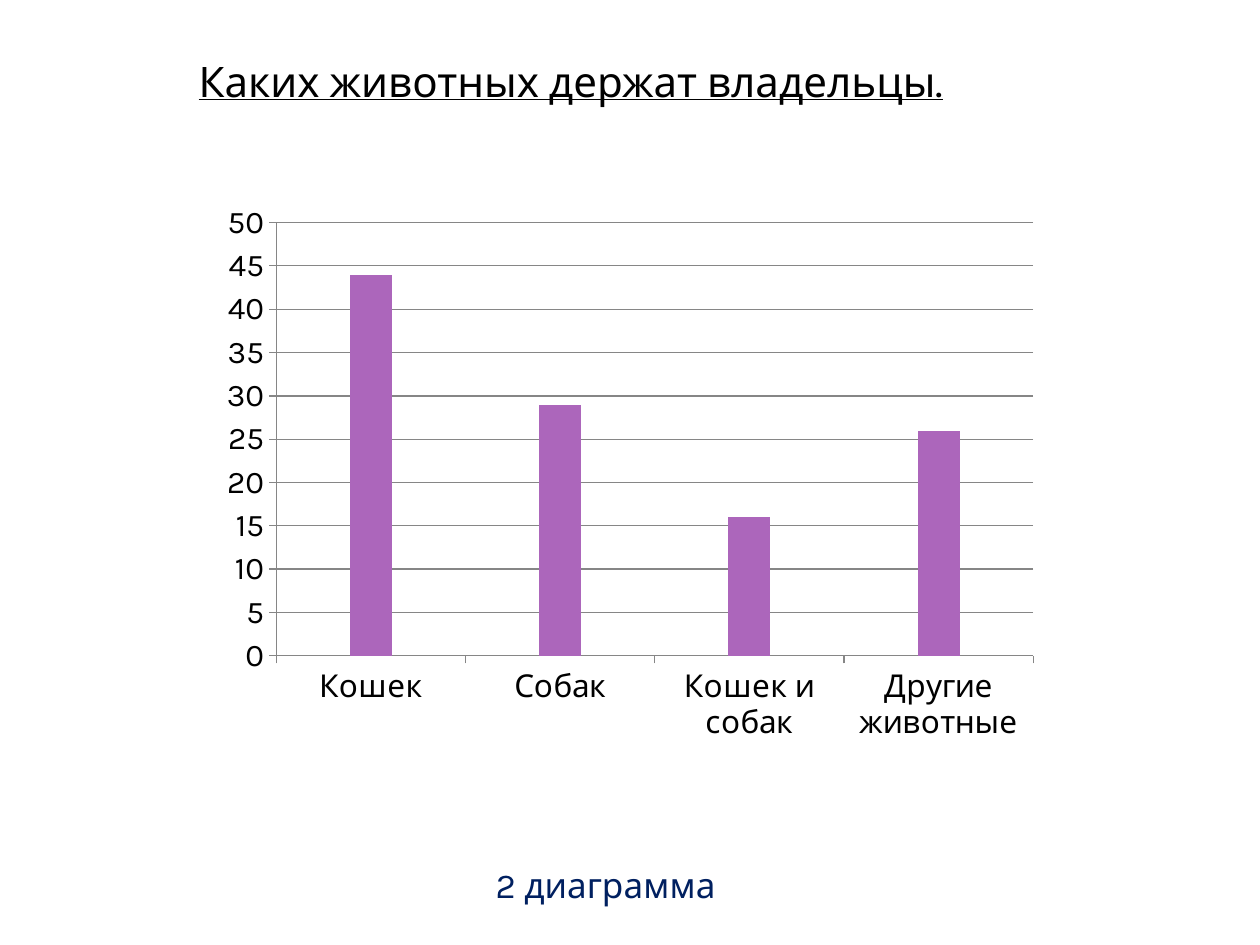
from dataclasses import dataclass

from pptx import Presentation
from pptx.chart.data import CategoryChartData
from pptx.dml.color import RGBColor
from pptx.enum.chart import XL_CHART_TYPE, XL_TICK_MARK
from pptx.enum.text import MSO_ANCHOR, MSO_AUTO_SIZE, PP_ALIGN
from pptx.util import Pt

COLUMNS = XL_CHART_TYPE.COLUMN_CLUSTERED
TICK_OUTSIDE = XL_TICK_MARK.OUTSIDE
TOP, BOTTOM = MSO_ANCHOR.TOP, MSO_ANCHOR.BOTTOM
LEFT, RIGHT = PP_ALIGN.LEFT, PP_ALIGN.RIGHT
NO_AUTOFIT = MSO_AUTO_SIZE.NONE

EMU_PER_PX = 914400 / 126
SLIDE_WIDTH, SLIDE_HEIGHT = 1260, 945
TITLE_ONLY_LAYOUT = 5

TITLE_BOX = (186, 49, 788, 63)
CHART_BOX = (210, 193, 840, 560)
CAPTION_BOX = (364, 857, 364, 49)

ANIMALS = ("Кошек", "Собак", "Кошек и собак", "Другие животные")
OWNERS = (44, 29, 16, 26)


@dataclass(frozen=True)
class Theme:
    font: str = "Karla"
    text: RGBColor = RGBColor(0x00, 0x00, 0x00)
    caption: RGBColor = RGBColor(0x00, 0x20, 0x60)
    grid: RGBColor = RGBColor(0x86, 0x86, 0x86)
    series: tuple = (
        RGBColor(0xB8, 0x3D, 0x68),
        RGBColor(0xAC, 0x66, 0xBB),
        RGBColor(0xDE, 0x6C, 0x36),
    )
    title_size: int = 24
    caption_size: int = 20
    chart_size: int = 18


THEME = Theme()


def px(length):
    return round(length * EMU_PER_PX)


def emu_box(box):
    return [px(length) for length in box]


def style_font(font, size, color):
    font.name = THEME.font
    font.size = Pt(size)
    font.color.rgb = color


def add_title(slide, box):
    title = slide.shapes.title
    title.left, title.top, title.width, title.height = emu_box(box)
    frame = title.text_frame
    frame.text = "Каких животных держат владельцы."
    frame.auto_size = NO_AUTOFIT
    frame.vertical_anchor = TOP
    heading = frame.paragraphs[0]
    heading.alignment = LEFT
    style_font(heading.font, THEME.title_size, THEME.text)
    heading.font.underline = True


def style_axis(axis):
    axis.major_tick_mark = TICK_OUTSIDE
    axis.format.line.color.rgb = THEME.grid
    axis.format.line.width = Pt(0.75)


def add_owners_chart(slide, box):
    """The outer series are empty and hold the space beside each column."""
    blank = (None,) * len(ANIMALS)
    data = CategoryChartData()
    data.categories = ANIMALS
    for number, values in enumerate((blank, OWNERS, blank), start=1):
        data.add_series(f"Series {number}", values)

    chart = slide.shapes.add_chart(COLUMNS, *emu_box(box), data).chart
    chart.has_legend = False
    chart.has_title = False
    style_font(chart.font, THEME.chart_size, THEME.text)

    plot = chart.plots[0]
    plot.gap_width = 150
    plot.overlap = 0
    plot.vary_by_categories = False
    for series, color in zip(plot.series, THEME.series):
        series.format.fill.solid()
        series.format.fill.fore_color.rgb = color

    style_axis(chart.category_axis)
    owners_axis = chart.value_axis
    style_axis(owners_axis)
    owners_axis.minimum_scale = 0
    owners_axis.maximum_scale = 50
    owners_axis.major_unit = 5
    owners_axis.has_major_gridlines = True
    gridline = owners_axis.major_gridlines.format.line
    gridline.color.rgb = THEME.grid
    gridline.width = Pt(0.75)


def add_caption(slide, box):
    frame = slide.shapes.add_textbox(*emu_box(box)).text_frame
    frame.word_wrap = True
    frame.vertical_anchor = BOTTOM
    frame.margin_top = frame.margin_bottom = 0
    frame.text = "2 диаграмма"
    caption = frame.paragraphs[0]
    caption.alignment = RIGHT
    style_font(caption.font, THEME.caption_size, THEME.caption)


def main():
    presentation = Presentation()
    presentation.slide_width = px(SLIDE_WIDTH)
    presentation.slide_height = px(SLIDE_HEIGHT)
    layout = presentation.slide_layouts[TITLE_ONLY_LAYOUT]
    slide = presentation.slides.add_slide(layout)
    add_owners_chart(slide, CHART_BOX)
    add_caption(slide, CAPTION_BOX)
    add_title(slide, TITLE_BOX)
    presentation.save("out.pptx")


if __name__ == "__main__":
    main()
